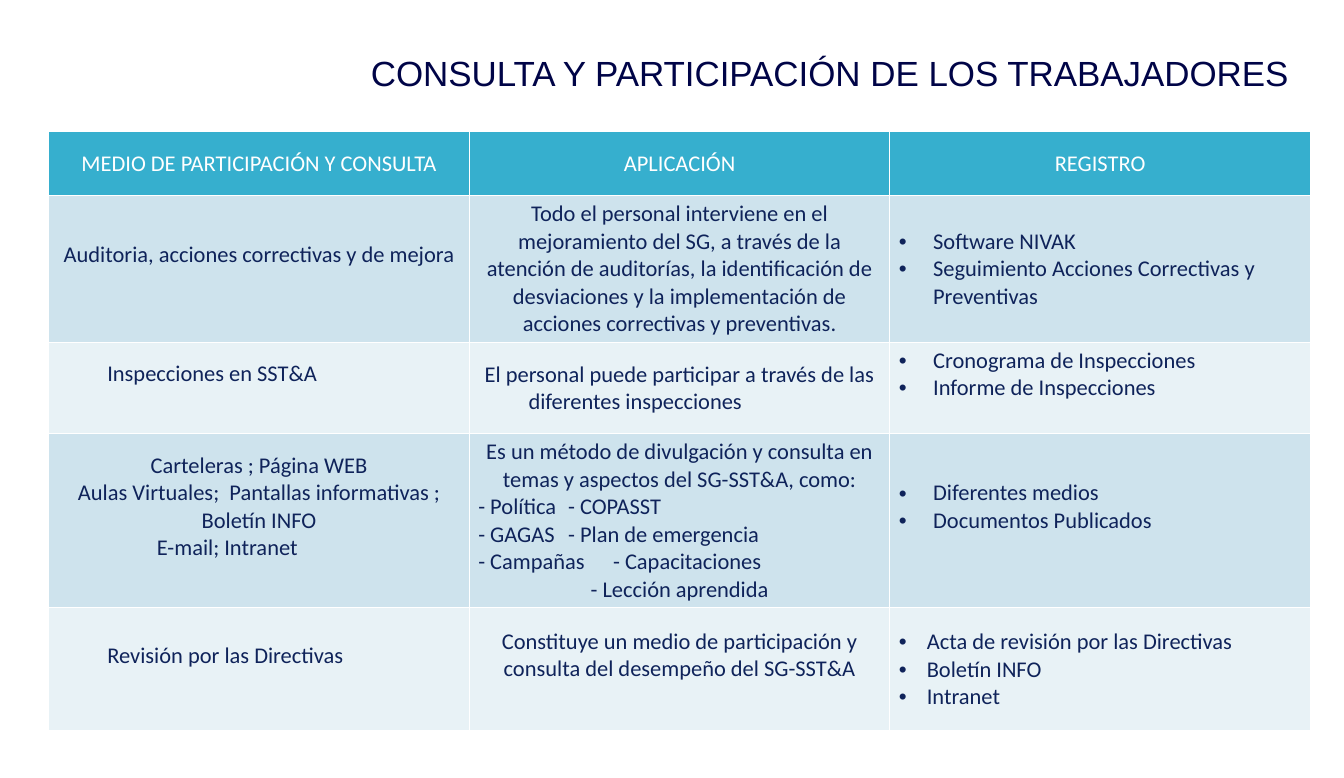
from lxml import etree
from pptx import Presentation
from pptx import util as u
from pptx.dml.color import RGBColor
from pptx.enum import text
from pptx.oxml.ns import qn

COLORS = {"title": "000447", "header": "36AFCE", "body": "0F235A",
          "band": "CEE3ED", "light": "E8F2F6", "white": "FFFFFF"}
CENTER = {"align": text.PP_ALIGN.CENTER}
LEFT = {"align": text.PP_ALIGN.LEFT}
BULLET = {**LEFT, "left": 0.97, "indent": -0.97, "bullet": "•"}
NARROW_BULLET = {**BULLET, "left": 0.79, "indent": -0.79}
OFFSET = {**LEFT, "left": 1.4}
HANGING = {**LEFT, "left": 1.42, "indent": -1.24}
EMAIL = {**LEFT, "left": 2.8}
PAIR = {**LEFT, "tab": 5.9}
LINE = 0.78

HEADINGS = ["MEDIO DE PARTICIPACIÓN Y CONSULTA", "APLICACIÓN", "REGISTRO"]
ROW_HEIGHTS = [1.82, 4.14, 2.57, 4.92, 3.48]
MEDIA = [
    [([("Auditoria, acciones correctivas y de mejora", CENTER)], LINE),
     ([("Todo el personal interviene en el mejoramiento del SG, a través de la "
        "atención de auditorías, la identificación de desviaciones y la "
        "implementación de acciones correctivas y preventivas.", CENTER)], 0),
     ([("Software NIVAK", BULLET),
       ("Seguimiento Acciones Correctivas y Preventivas", BULLET)], 0)],
    [([("Inspecciones en SST&A", OFFSET)], LINE),
     ([("El personal puede participar a través de las diferentes inspecciones",
        HANGING)], 0),
     ([("Cronograma de Inspecciones", BULLET),
       ("Informe de Inspecciones", BULLET)], LINE)],
    [([("Carteleras ; Página WEB", CENTER),
       ("Aulas Virtuales;  Pantallas informativas ; Boletín INFO", CENTER),
       ("E-mail; Intranet", EMAIL)], LINE),
     ([("Es un método de divulgación y consulta en temas y aspectos del "
        "SG-SST&A, como:", CENTER),
       ("- Política\t- COPASST", PAIR),
       ("- GAGAS\t- Plan de emergencia", PAIR),
       ("- Campañas\t- Capacitaciones", PAIR),
       ("- Lección aprendida", CENTER)], 0),
     ([("Diferentes medios", BULLET),
       ("Documentos Publicados", BULLET)], LINE)],
    [([("Revisión por las Directivas", OFFSET)], LINE),
     ([("Constituye un medio de participación y consulta del desempeño del "
        "SG-SST&A", CENTER)], LINE),
     ([("Acta de revisión por las Directivas", NARROW_BULLET),
       ("Boletín INFO", NARROW_BULLET),
       ("Intranet", NARROW_BULLET)], 0)],
]


def assign(target, values):
    """Set every named attribute on the target."""
    for name, value in values.items():
        setattr(target, name, value)


class ParticipationSlide:
    """Holds the style and the current slide."""

    def __init__(self, deck):
        """Add a title-only slide to the deck."""
        self.slide = deck.slides.add_slide(deck.slide_layouts[5])
        self.font = {"name": "Calibri", "size": u.Pt(18), "bold": False}

    def add_words(self, paragraph, words, color, **font):
        """Add one formatted run."""
        run = paragraph.add_run()
        run.text = words
        assign(run.font, {**self.font, **font})
        run.font.color.rgb = RGBColor.from_string(COLORS[color])

    def title(self, words):
        """Place and format the title placeholder."""
        heading = self.slide.shapes.title
        assign(heading, {"left": u.Cm(5.21), "top": u.Cm(1.5),
                         "width": u.Cm(31.22), "height": u.Cm(1.14)})
        assign(heading.text_frame, {
            "margin_left": 0, "margin_right": 0, "margin_top": 0,
            "margin_bottom": 0, "word_wrap": True,
            "auto_size": text.MSO_AUTO_SIZE.NONE,
            "vertical_anchor": text.MSO_ANCHOR.MIDDLE})
        line = heading.text_frame.paragraphs[0]
        assign(line, {"alignment": text.PP_ALIGN.RIGHT, "line_spacing": u.Pt(32)})
        self.add_words(line, words, "title", name="Arial", size=u.Pt(28))

    def layout(self, paragraph, style):
        """Set alignment, indents, bullet and tab stop of a paragraph."""
        paragraph.alignment = style["align"]
        props = paragraph._p.get_or_add_pPr()
        props.set("marL", str(u.Cm(style.get("left", 0))))
        props.set("indent", str(u.Cm(style.get("indent", 0))))
        if "bullet" in style:
            etree.SubElement(props, qn("a:buFont"), typeface="Arial")
            etree.SubElement(props, qn("a:buChar"), char=style["bullet"])
        if "tab" in style:
            stops = etree.SubElement(props, qn("a:tabLst"))
            etree.SubElement(stops, qn("a:tab"), pos=str(u.Cm(style["tab"])), algn="l")

    def cell(self, cell, paragraphs, fill, color, room_below=0):
        """Fill a table cell with its paragraphs."""
        assign(cell, {"vertical_anchor": text.MSO_ANCHOR.MIDDLE,
                      "margin_bottom": u.Cm(0.13 + room_below)})
        frame = cell.text_frame
        for index, (words, style) in enumerate(paragraphs):
            paragraph = frame.add_paragraph() if index else frame.paragraphs[0]
            self.layout(paragraph, style)
            self.add_words(paragraph, words, color)
        props = cell._tc.get_or_add_tcPr()
        for edge in ("a:lnL", "a:lnR", "a:lnT", "a:lnB"):
            border = etree.SubElement(props, qn(edge), w=str(u.Pt(1)))
            paint = etree.SubElement(border, qn("a:solidFill"))
            etree.SubElement(paint, qn("a:srgbClr"), val=COLORS["white"])
        cell.fill.solid()
        cell.fill.fore_color.rgb = RGBColor.from_string(COLORS[fill])

    def table(self, headings, rows, heights):
        """Add the table of participation media."""
        table = self.slide.shapes.add_table(
            len(heights), len(headings), u.Cm(1.38), u.Cm(3.72),
            u.Cm(35.67), u.Cm(sum(heights))).table
        table.horz_banding = False
        for row, height in zip(table.rows, heights):
            row.height = u.Cm(height)
        for column, heading in enumerate(headings):
            self.cell(table.cell(0, column), [(heading, CENTER)], "header", "white")
        for number, row in enumerate(rows, 1):
            fill = "band" if number % 2 else "light"
            for column, (paragraphs, room) in enumerate(row):
                self.cell(table.cell(number, column), paragraphs, fill, "body", room)


def main():
    """Build and save the slide."""
    deck = Presentation()
    assign(deck, {"slide_width": u.Cm(38), "slide_height": u.Cm(22)})
    page = ParticipationSlide(deck)
    page.title("CONSULTA Y PARTICIPACIÓN DE LOS TRABAJADORES")
    page.table(HEADINGS, MEDIA, ROW_HEIGHTS)
    deck.save("out.pptx")


if __name__ == "__main__":
    main()
